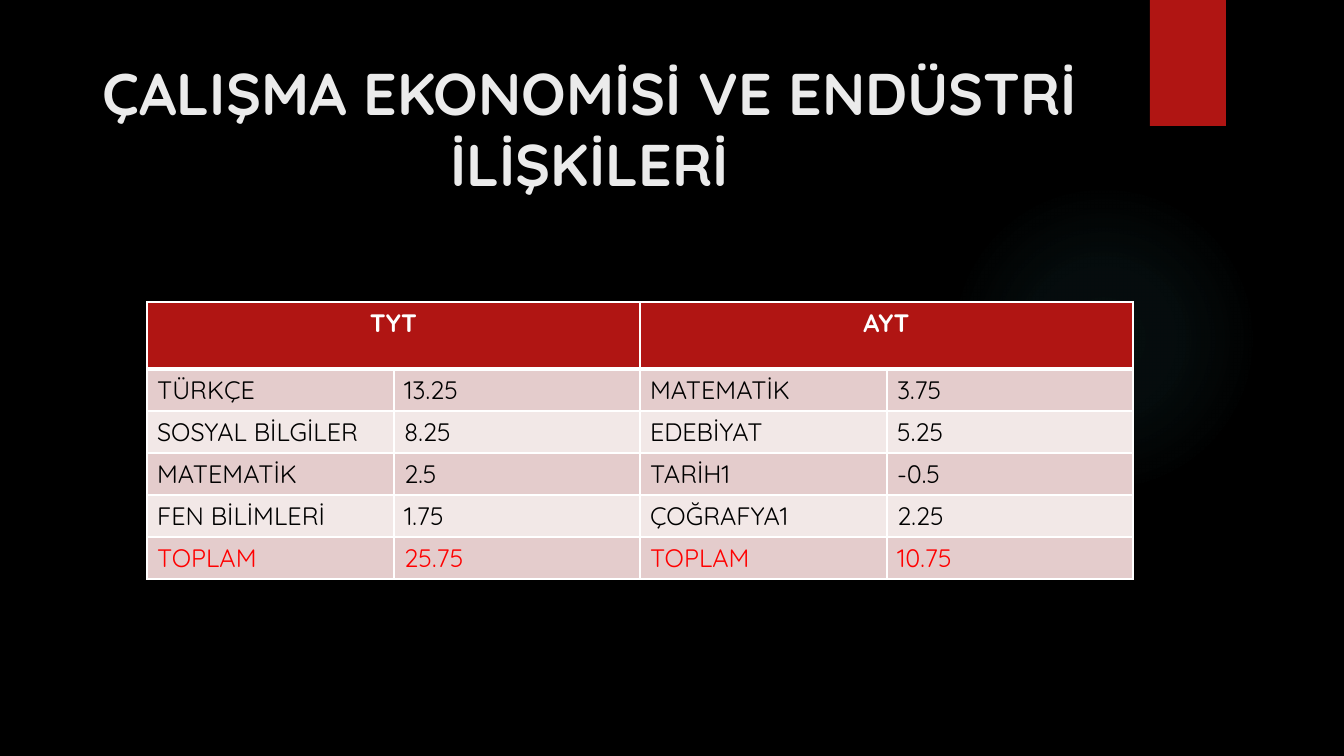
"""Build the exam results slide for the labour economics department."""
from lxml import etree
from pptx import Presentation
from pptx import util as u
from pptx.dml.color import RGBColor
from pptx.enum import shapes, text
from pptx.oxml import parse_xml
from pptx.oxml.ns import nsdecls, qn

PX = 914400 / 100.8
FONT = "Quicksand"
RED, WHITE, BLACK, TOTAL_RED = "B01513", "FFFFFF", "000000", "FF0000"
BANDS = ["E4CCCC", "F2E8E7"]


def px(*lengths):
    return [u.Emu(round(length * PX)) for length in lengths]


def color(value):
    return RGBColor.from_string(value)


prs = Presentation()
prs.slide_width, prs.slide_height = px(1344, 756)
slide = prs.slides.add_slide(prs.slide_layouts[6])
slide.background.fill.solid()
slide.background.fill.fore_color.rgb = color(BLACK)

glow = slide.shapes.add_shape(shapes.MSO_SHAPE.OVAL, *px(949, 184, 310, 310))
glow.shadow.inherit = False
glow.line.fill.background()
stops = "".join(
    f'<a:gs pos="{position * 1000}"><a:srgbClr val="50B9C1">'
    f'<a:alpha val="{alpha * 1000}"/></a:srgbClr></a:gs>'
    for position, alpha in [(0, 7), (36, 6), (69, 0)]
)
glow.element.spPr.find(qn("a:prstGeom")).addnext(parse_xml(
    f'<a:gradFill {nsdecls("a")}><a:gsLst>{stops}</a:gsLst><a:path path="circle">'
    '<a:fillToRect l="50000" t="50000" r="50000" b="50000"/></a:path></a:gradFill>'
))

ribbon = slide.shapes.add_shape(shapes.MSO_SHAPE.RECTANGLE, *px(1150, 0, 76, 126))
ribbon.shadow.inherit = False
ribbon.fill.solid()
ribbon.fill.fore_color.rgb = color(RED)
ribbon.line.fill.background()

department = slide.shapes.add_textbox(*px(71, 50, 1037, 155)).text_frame
department.word_wrap = True
department.vertical_anchor = text.MSO_ANCHOR.MIDDLE
heading = department.paragraphs[0]
heading.alignment = text.PP_ALIGN.CENTER
run = heading.add_run()
run.text = "ÇALIŞMA EKONOMİSİ VE ENDÜSTRİ İLİŞKİLERİ"
run.font.name, run.font.size, run.font.bold = FONT, u.Pt(42), True
run.font.color.rgb = color("EBEBEB")

scores = [
    ["TYT", "", "AYT", ""],
    ["TÜRKÇE", "13.25", "MATEMATİK", "3.75"],
    ["SOSYAL BİLGİLER", "8.25", "EDEBİYAT", "5.25"],
    ["MATEMATİK", "2.5", "TARİH1", "-0.5"],
    ["FEN BİLİMLERİ", "1.75", "ÇOĞRAFYA1", "2.25"],
    ["TOPLAM", "25.75", "TOPLAM", "10.75"],
]
results = slide.shapes.add_table(len(scores), 4, *px(147, 302, 986, 277)).table
for column, width in zip(results.columns, px(247, 246, 247, 246)):
    column.width = width
for row, height in zip(results.rows, px(67, 42, 42, 42, 42, 42)):
    row.height = height
for first in (0, 2):
    results.cell(0, first).merge(results.cell(0, first + 1))

for r, values in enumerate(scores):
    header, total = r == 0, r == len(scores) - 1
    for c, value in enumerate(values):
        cell = results.cell(r, c)
        cell.fill.solid()
        cell.fill.fore_color.rgb = color(RED if header else BANDS[(r - 1) % 2])
        properties = cell._tc.get_or_add_tcPr()
        for index, side in enumerate(["lnL", "lnR", "lnT", "lnB"]):
            thick = (header and side == "lnB") or (r == 1 and side == "lnT")
            border = etree.Element(qn(f"a:{side}"), w=str(u.Pt(3 if thick else 1)))
            paint = etree.SubElement(border, qn("a:solidFill"))
            etree.SubElement(paint, qn("a:srgbClr"), val=WHITE)
            properties.insert(index, border)
        if not value:
            continue
        paragraph = cell.text_frame.paragraphs[0]
        paragraph.alignment = text.PP_ALIGN.CENTER if header else text.PP_ALIGN.LEFT
        run = paragraph.add_run()
        run.text = value
        run.font.name, run.font.size, run.font.bold = FONT, u.Pt(18), header
        run.font.color.rgb = color(WHITE if header else TOTAL_RED if total else BLACK)

prs.save("out.pptx")
